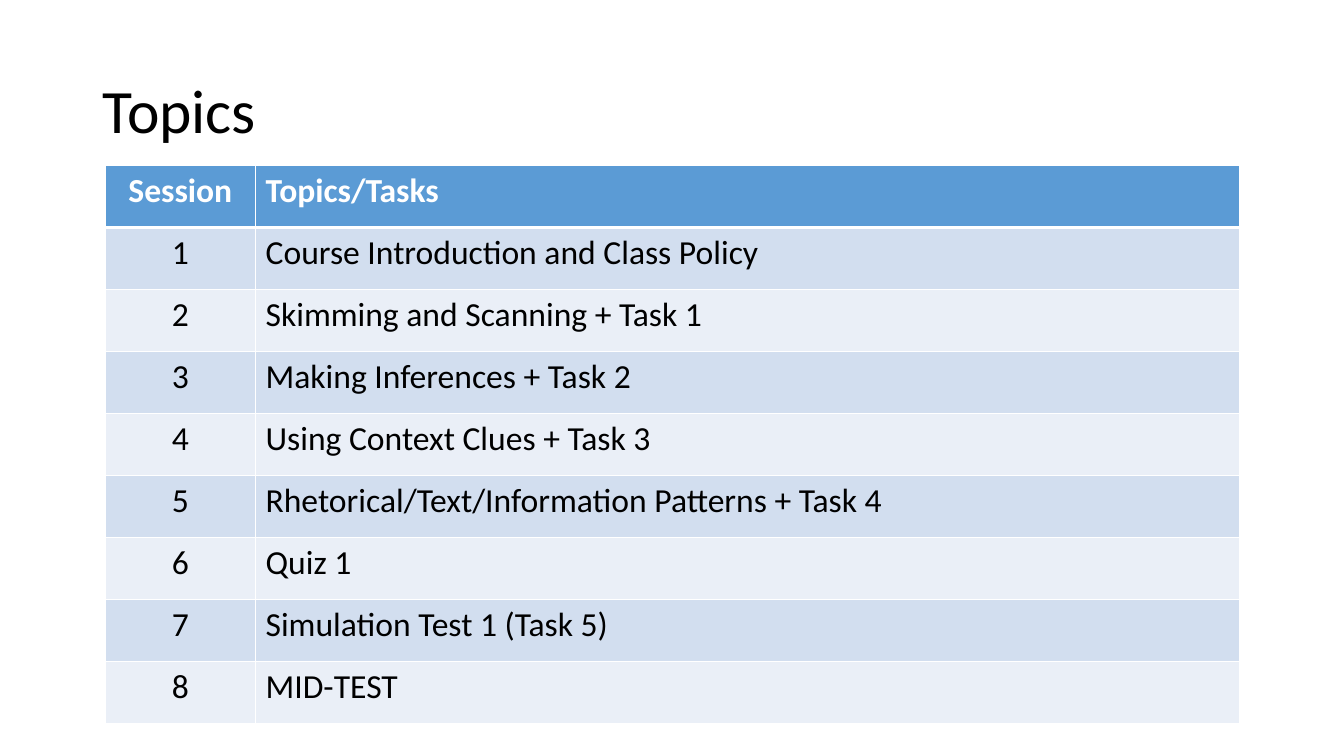
from dataclasses import dataclass

from lxml import etree
from pptx import Presentation
from pptx.dml.color import RGBColor
from pptx.enum.text import MSO_ANCHOR, MSO_AUTO_SIZE, PP_ALIGN
from pptx.oxml.ns import qn
from pptx.util import Cm, Pt

LEFT, CENTER = PP_ALIGN.LEFT, PP_ALIGN.CENTER
MIDDLE, TOP = MSO_ANCHOR.MIDDLE, MSO_ANCHOR.TOP
NO_AUTOFIT = MSO_AUTO_SIZE.NONE
TITLE_ONLY = 5


@dataclass(frozen=True)
class Theme:
    """Colours, font and type sizes of the deck."""
    font: str = "Calibri"
    title_size: int = 44
    table_size: int = 24
    ink: str = "000000"
    paper: str = "FFFFFF"
    header: str = "5B9BD5"
    bands: tuple = ("D2DEEF", "EAEFF7")


THEME = Theme()
HEADINGS = ("Session", "Topics/Tasks")
TOPICS = (
    "Course Introduction and Class Policy",
    "Skimming and Scanning + Task 1",
    "Making Inferences + Task 2",
    "Using Context Clues + Task 3",
    "Rhetorical/Text/Information Patterns + Task 4",
    "Quiz 1",
    "Simulation Test 1 (Task 5)",
    "MID-TEST",
)


def add_span(para, text, size, colour, bold=False):
    """Add one formatted run to a paragraph."""
    span = para.add_run()
    span.text = text
    span.font.name = THEME.font
    span.font.size = Pt(size)
    span.font.bold = bold
    span.font.color.rgb = RGBColor.from_string(colour)


def set_borders(cell, widths):
    """Draw the cell's borders, given points for each side tag."""
    properties = cell._tc.get_or_add_tcPr()
    for side, width in widths.items():
        line = etree.SubElement(properties, qn(f"a:{side}"), w=str(Pt(width)))
        fill = etree.SubElement(line, qn("a:solidFill"))
        etree.SubElement(fill, qn("a:srgbClr"), val=THEME.paper)


def add_title(page, box, text):
    """Place the title placeholder in the box."""
    title = page.shapes.title
    title.left, title.top, title.width, title.height = box
    frame = title.text_frame
    frame.word_wrap = True
    frame.auto_size = NO_AUTOFIT
    frame.vertical_anchor = MIDDLE
    para = frame.paragraphs[0]
    para.alignment = LEFT
    para.line_spacing = 0.9
    add_span(para, text, THEME.title_size, THEME.ink)


def add_schedule(page, box, session_width):
    """Fill the box with the numbered table of topics."""
    rows = [HEADINGS, *((str(n), topic) for n, topic in enumerate(TOPICS, 1))]
    width, height = box[2:]
    table = page.shapes.add_table(len(rows), len(HEADINGS), *box).table
    table.columns[0].width = session_width
    table.columns[1].width = width - session_width
    for r, texts in enumerate(rows):
        table.rows[r].height = height // len(rows)
        is_header = r == 0
        band = THEME.header if is_header else THEME.bands[(r - 1) % 2]
        colour = THEME.paper if is_header else THEME.ink
        borders = {"lnL": 1, "lnR": 1, "lnT": 3 if r == 1 else 1,
                   "lnB": 3 if is_header else 1}
        for c, text in enumerate(texts):
            cell = table.cell(r, c)
            cell.vertical_anchor = TOP
            set_borders(cell, borders)
            cell.fill.solid()
            cell.fill.fore_color.rgb = RGBColor.from_string(band)
            para = cell.text_frame.paragraphs[0]
            para.alignment = LEFT if c else CENTER
            add_span(para, text, THEME.table_size, colour, is_header)


def main():
    """Build the topics slide and save the deck."""
    deck = Presentation()
    deck.slide_width, deck.slide_height = Cm(33.87), Cm(19.05)
    page = deck.slides.add_slide(deck.slide_layouts[TITLE_ONLY])
    add_title(page, (Cm(2.33), Cm(1.01), Cm(29.21), Cm(3.68)), "Topics")
    add_schedule(page, (Cm(2.65), Cm(4.17), Cm(28.6), Cm(14.07)), Cm(3.79))
    deck.save("out.pptx")


if __name__ == "__main__":
    main()
